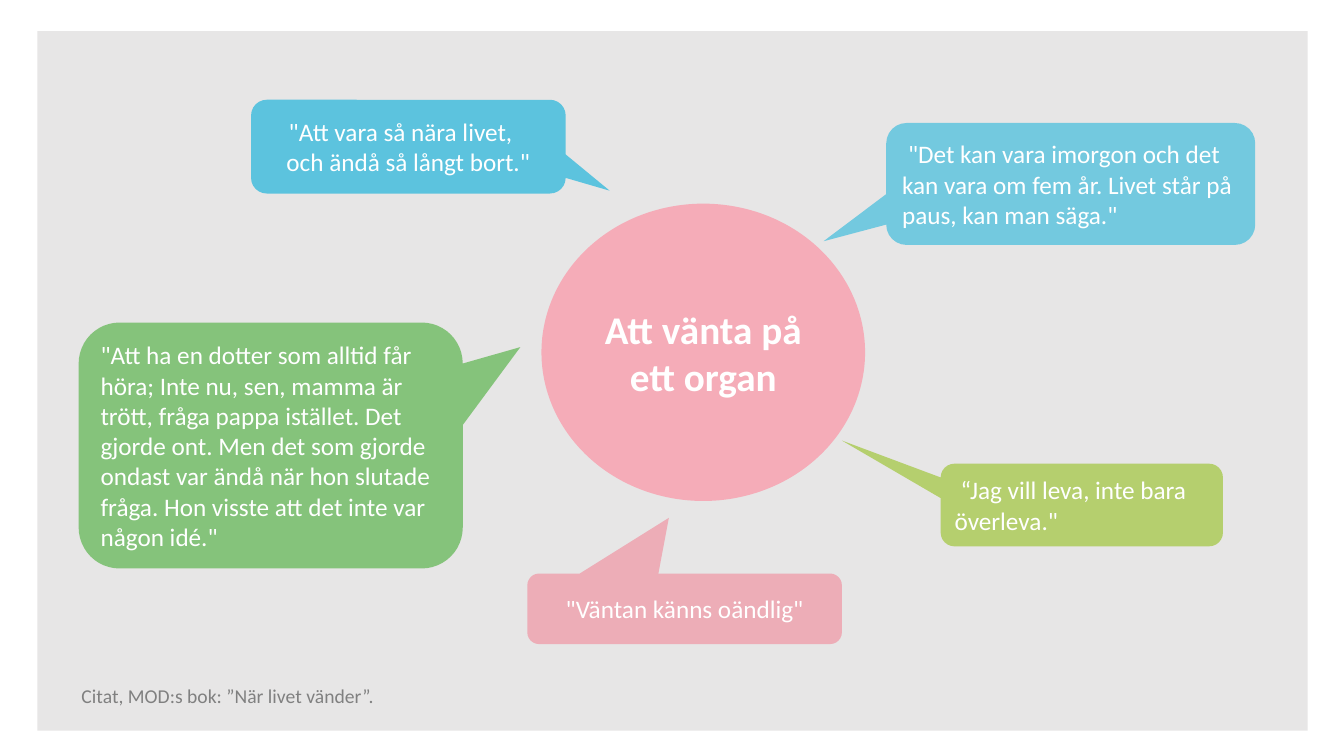
from lxml import etree
from pptx import Presentation
from pptx.dml.color import RGBColor
from pptx.enum import shapes, text
from pptx.oxml.ns import qn
from pptx.util import Inches, Pt

# Content
PANEL = (0.37, 0.31, 12.6, 6.94)
TOPIC = ("Att vänta på ett organ", (5.37, 2.02, 3.21, 2.95))
SOURCE = ("Citat, MOD:s bok: ”När livet vänder”.", (0.71, 6.74, 5.74, 0.57))
L, C = text.PP_ALIGN.LEFT, text.PP_ALIGN.CENTER

# Quotes: lines as (text, alignment, first-line indent), box, tail, fill, opacity %
QUOTES = [
    ([("\"Att vara så nära livet,", L, 0.23), ("och ändå så långt bort.\"", C, 0)],
     (2.49, 0.99, 3.12, 0.93), (0.64, 0.47), "00ADD9", 60),
    ([("\"Att ha en dotter som alltid får höra; Inte nu, sen, mamma är trött, "
       "fråga pappa istället. Det gjorde ont. Men det som gjorde ondast var ändå "
       "när hon slutade fråga. Hon visste att det inte var någon idé.\"", L, 0)],
     (0.78, 3.2, 3.81, 2.44), (0.65, -0.4), "45AC34", 60),
    ([("“Jag vill leva, inte bara överleva.\"", L, 0.06)],
     (9.33, 4.6, 2.8, 0.82), (-0.85, -0.78), "95C11F", 60),
    ([("\"Väntan känns oändlig\"", C, 0)],
     (5.23, 5.69, 3.12, 0.7), (-0.05, -1.29), "F18798", 60),
    ([("\"Det kan vara imorgon och det kan vara om fem år. "
       "Livet står på paus, kan man säga.\"", L, 0.06)],
     (8.79, 1.22, 3.66, 1.21), (-0.67, 0.47), "00ADD9", 50),
]


def color(target, value):
    target.rgb = RGBColor.from_string(value)


def add_shape(kind, box, fill, opacity=100):
    sp = s.shapes.add_shape(kind, *map(Inches, box))
    sp.shadow.inherit = False
    sp.line.fill.background()
    sp.fill.solid()
    color(sp.fill.fore_color, fill)
    if opacity < 100:
        rgb = sp.fill._xPr.find(".//" + qn("a:srgbClr"))
        etree.SubElement(rgb, qn("a:alpha"), val=str(opacity * 1000))
    return sp


def write(sp, lines, size=18, fill="FFFFFF", bold=False, anchor=text.MSO_ANCHOR.MIDDLE):
    tf = sp.text_frame
    tf.word_wrap = True
    tf.vertical_anchor = anchor
    for i, (words, align, indent) in enumerate(lines):
        p = tf.add_paragraph() if i else tf.paragraphs[0]
        p.alignment = align
        if indent:
            p._p.get_or_add_pPr().set("indent", str(Inches(indent)))
        r = p.add_run()
        r.text = words
        r.font.name, r.font.size, r.font.bold = "Calibri", Pt(size), bold
        color(r.font.color, fill)


prs = Presentation()
prs.slide_width, prs.slide_height = Inches(13.33), Inches(7.5)
s = prs.slides.add_slide(prs.slide_layouts[6])

# Background panel and central topic
add_shape(shapes.MSO_SHAPE.RECTANGLE, PANEL, "E7E6E6")
words, box = TOPIC
sp = add_shape(shapes.MSO_SHAPE.FLOWCHART_CONNECTOR, box, "F5ACB8")
write(sp, [(words, C, 0)], size=28, bold=True)

# Speech bubbles
for lines, box, tail, fill, opacity in QUOTES:
    sp = add_shape(shapes.MSO_SHAPE.ROUNDED_RECTANGULAR_CALLOUT, box, fill, opacity)
    sp.adjustments[0], sp.adjustments[1] = tail
    write(sp, lines)

# Source line
words, box = SOURCE
sp = s.shapes.add_textbox(*map(Inches, box))
write(sp, [(words, L, 0)], size=14, fill="808080", anchor=text.MSO_ANCHOR.TOP)

prs.save("out.pptx")
